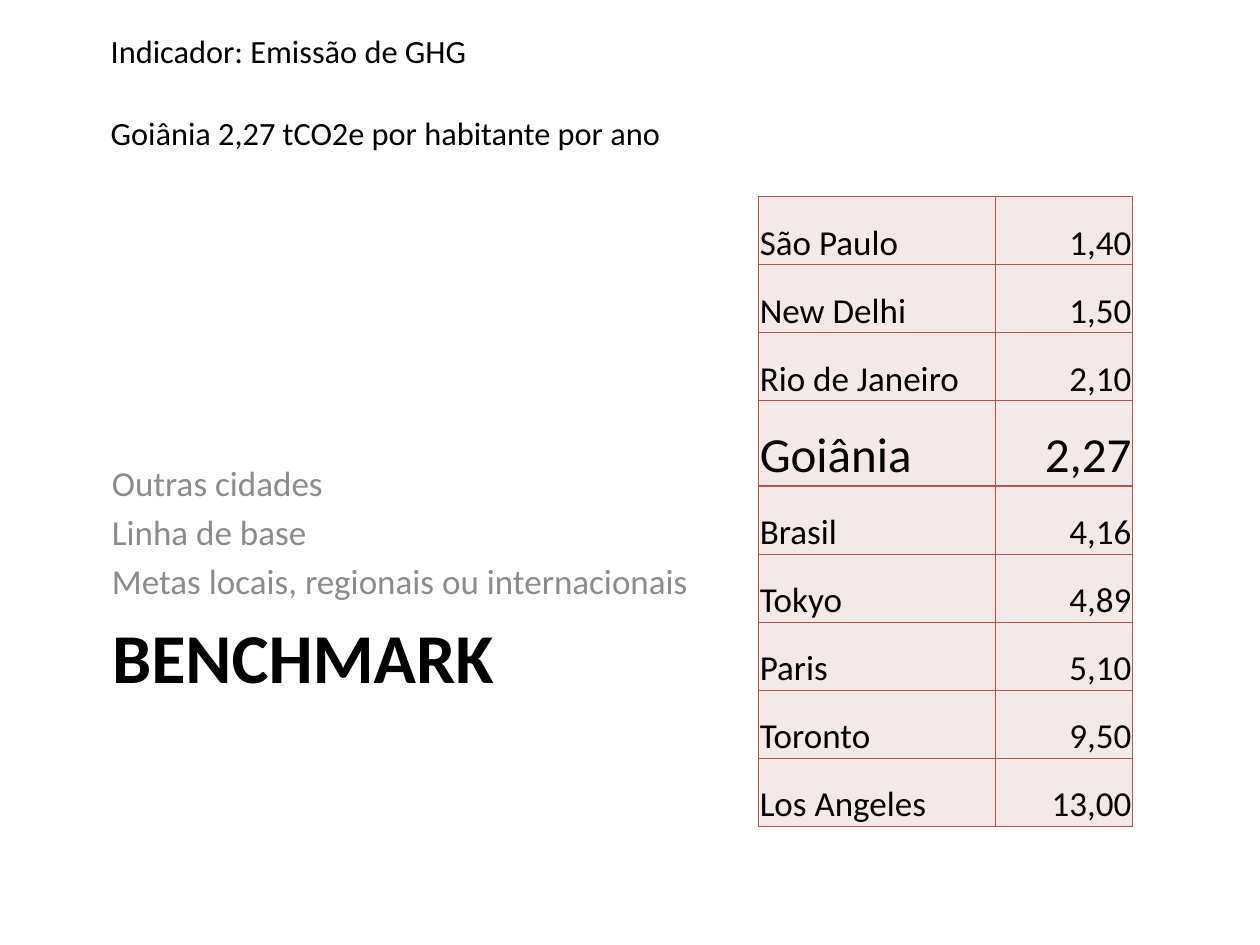
from lxml import etree
from pptx import Presentation
from pptx.dml.color import RGBColor
from pptx.enum.text import MSO_ANCHOR, MSO_AUTO_SIZE, PP_ALIGN
from pptx.oxml.ns import qn
from pptx.util import Inches, Pt

TOP, BOTTOM = MSO_ANCHOR.TOP, MSO_ANCHOR.BOTTOM
LEFT, RIGHT = PP_ALIGN.LEFT, PP_ALIGN.RIGHT
NO_FIT = MSO_AUTO_SIZE.NONE

# Content
TITLE = "BENCHMARK"
HEAD = ["Indicador: Emissão de GHG", "Goiânia 2,27 tCO2e por habitante por ano"]
BASES = ["Outras cidades", "Linha de base", "Metas locais, regionais ou internacionais"]
FOCUS = "Goiânia"
CITIES = [
    ("São Paulo", "1,40"),
    ("New Delhi", "1,50"),
    ("Rio de Janeiro", "2,10"),
    (FOCUS, "2,27"),
    ("Brasil", "4,16"),
    ("Tokyo", "4,89"),
    ("Paris", "5,10"),
    ("Toronto", "9,50"),
    ("Los Angeles", "13,00"),
]


class Theme:
    font = "Calibri"
    ink, gray, line, fill = "000000", "8C8C8C", "C0504D", "F4E9E9"
    title, head, text, focus = 40, 18.5, 20, 28


def add_run(para, text, size, color=Theme.ink, bold=False):
    run = para.add_run()
    run.text = text
    font = run.font
    font.name, font.size, font.bold = Theme.font, Pt(size), bold
    font.color.rgb = RGBColor.from_string(color)


def set_frame(frame, anchor):
    frame.word_wrap = True
    frame.auto_size = NO_FIT
    frame.vertical_anchor = anchor


def add_lines(slide, box, lines, anchor, size, color, gap, pitch=1.0):
    frame = slide.shapes.add_textbox(*map(Inches, box)).text_frame
    set_frame(frame, anchor)
    for i, line in enumerate(lines):
        para = frame.paragraphs[0] if i == 0 else frame.add_paragraph()
        para.alignment = LEFT
        para.line_spacing = pitch
        para.space_before = Pt(gap if i else 0)
        add_run(para, line, size, color)


def add_edges(cell):
    props = cell._tc.get_or_add_tcPr()
    for i, side in enumerate(("a:lnL", "a:lnR", "a:lnT", "a:lnB")):
        edge = etree.Element(qn(side), w=str(Pt(1)))
        paint = etree.SubElement(edge, qn("a:solidFill"))
        etree.SubElement(paint, qn("a:srgbClr"), val=Theme.line)
        props.insert(i, edge)


def fill_cell(cell, text, align, size):
    cell.fill.solid()
    cell.fill.fore_color.rgb = RGBColor.from_string(Theme.fill)
    cell.margin_left = cell.margin_right = cell.margin_top = Inches(0.01)
    cell.margin_bottom = 0
    cell.vertical_anchor = BOTTOM
    para = cell.text_frame.paragraphs[0]
    para.alignment = align
    add_run(para, text, size)
    add_edges(cell)


def add_cities(slide):
    frame = slide.shapes.add_table(
        len(CITIES), 2, Inches(6.02), Inches(1.56), Inches(2.97), Inches(5))
    table = frame.table
    table.first_row = table.horz_banding = False
    for col, width in zip(table.columns, (1.88, 1.09)):
        col.width = Inches(width)
    for r, city in enumerate(CITIES):
        focus = city[0] == FOCUS
        table.rows[r].height = Inches(0.68 if focus else 0.54)
        size = Theme.focus if focus else Theme.text
        for c, align in enumerate((LEFT, RIGHT)):
            fill_cell(table.cell(r, c), city[c], align, size)


def main():
    deck = Presentation()
    deck.slide_width, deck.slide_height = Inches(10), Inches(7.5)
    slide = deck.slides.add_slide(deck.slide_layouts[5])

    # Title
    title = slide.shapes.title
    title.left, title.top = Inches(0.79), Inches(4.82)
    title.width, title.height = Inches(8.5), Inches(1.49)
    set_frame(title.text_frame, TOP)
    para = title.text_frame.paragraphs[0]
    para.alignment = LEFT
    add_run(para, TITLE, Theme.title, bold=True)

    # Bases of comparison and indicator
    add_lines(slide, (0.79, 3.18, 8.5, 1.64), BASES, BOTTOM,
              Theme.text, Theme.gray, gap=4)
    add_lines(slide, (0.78, 0.23, 8.52, 1.09), HEAD, TOP,
              Theme.head, Theme.ink, gap=27, pitch=0.9)

    # Emissions by place
    add_cities(slide)
    deck.save("out.pptx")


if __name__ == "__main__":
    main()
